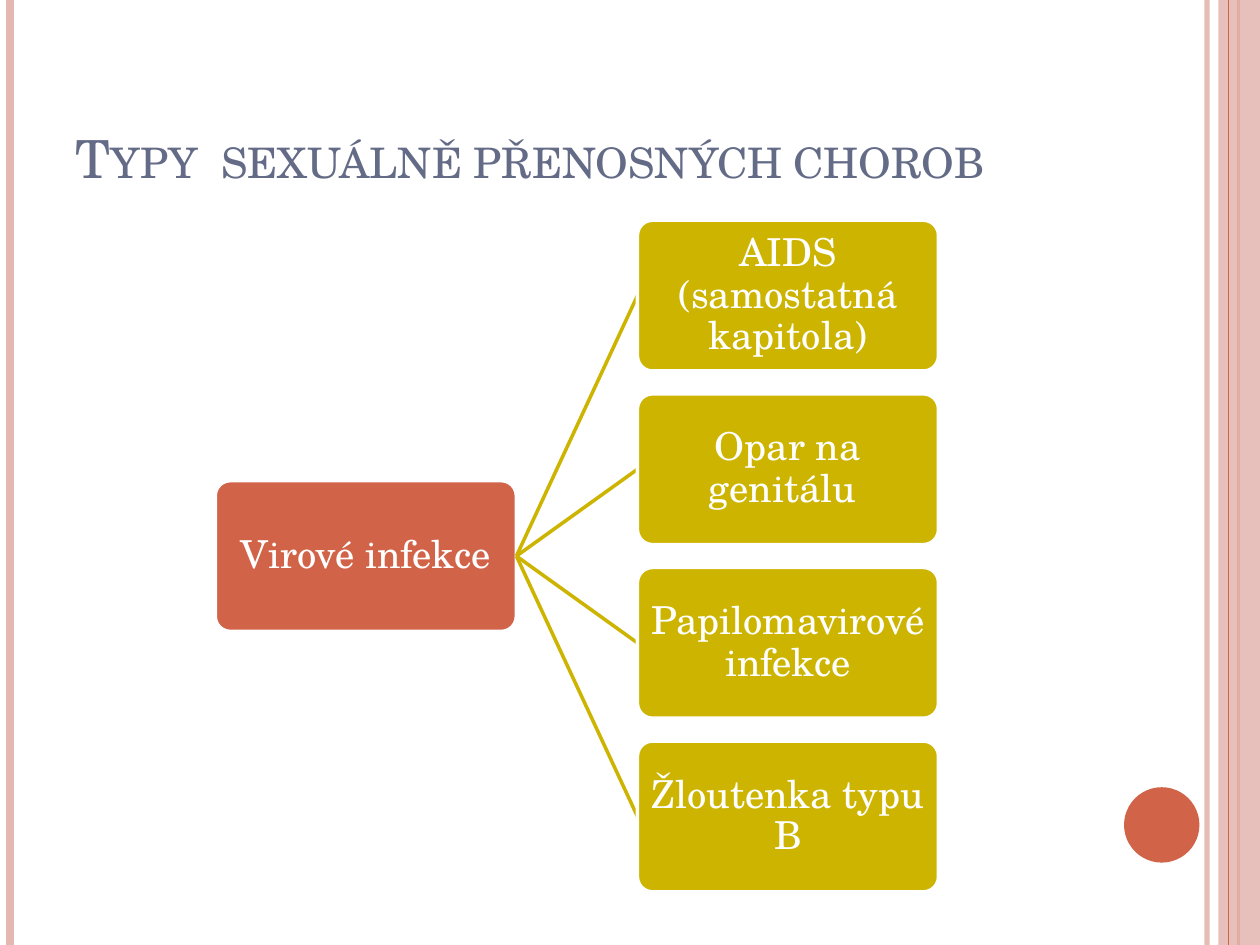
import pptx
import pptx.util
import pptx.dml.color
import pptx.enum.shapes
import pptx.enum.text
import pptx.oxml.ns
import lxml.etree
from dataclasses import dataclass

Cm, Pt = pptx.util.Cm, pptx.util.Pt
SHAPE = pptx.enum.shapes.MSO_SHAPE
ANCHOR = pptx.enum.text.MSO_ANCHOR
ALIGN = pptx.enum.text.PP_ALIGN


@dataclass(frozen=True)
class Theme:
    font: str = "TeX Gyre Schola"
    title_size: int = 30
    node_size: int = 22
    white: str = "FFFFFF"
    title: str = "646B86"
    accent: str = "D16349"
    pale: str = "E5B7B1"
    branch: str = "CCB400"


THEME = Theme()


def rgb(color):
    return pptx.dml.color.RGBColor.from_string(color)


def apply(obj, formats):
    for name, value in formats.items():
        setattr(obj, name, value)


def set_alpha(fill, percent):
    clr = fill._xPr.find(".//" + pptx.oxml.ns.qn("a:srgbClr"))
    lxml.etree.SubElement(clr, pptx.oxml.ns.qn("a:alpha"), val=str(percent * 1000))


def write(tf, text, size, color, align, frame):
    apply(tf, {"word_wrap": True, "auto_size": pptx.enum.text.MSO_AUTO_SIZE.NONE, **frame})
    p = tf.paragraphs[0]
    p.alignment = align
    r = p.add_run()
    r.text = text
    apply(r.font, {"name": THEME.font, "size": Pt(size)})
    r.font.color.rgb = rgb(color)
    return p, r


def add_box(s, kind, x, y, w, h, color):
    sp = s.shapes.add_shape(kind, Cm(x), Cm(y), Cm(w), Cm(h))
    sp.shadow.inherit = False
    sp.fill.solid()
    sp.fill.fore_color.rgb = rgb(color)
    sp.line.fill.background()
    return sp


def add_line(s, x1, y1, x2, y2, color, width, alpha=100):
    cx = s.shapes.add_connector(
        pptx.enum.shapes.MSO_CONNECTOR.STRAIGHT, Cm(x1), Cm(y1), Cm(x2), Cm(y2))
    cx.line.color.rgb = rgb(color)
    cx.line.width = Pt(width)
    if alpha < 100:
        set_alpha(cx.line.fill, alpha)
    lxml.etree.SubElement(cx._element.spPr, pptx.oxml.ns.qn("a:effectLst"))
    return cx


def add_frame(s, x, y, w, h):
    def rule(dx, color, width, alpha=100):
        add_line(s, x + dx, y, x + dx, y + h, color, width, alpha)

    rule(w - 1.07, THEME.pale, 3, 93)
    rule(0.21, THEME.pale, 4.5)
    rule(w - 0.43, THEME.accent, 1.5)
    band = add_box(s, SHAPE.RECTANGLE, x + w - 0.84, y, 0.84, h, THEME.pale)
    set_alpha(band.fill, 87)
    rule(w - 0.64, THEME.accent, 0.75)
    add_box(s, SHAPE.OVAL, x + w - 2.74, y + h - 3.18, 1.52, 1.52, THEME.accent)


def add_title(s, text, x, y, w, h):
    sp = s.shapes.title
    apply(sp, {"left": Cm(x), "top": Cm(y), "width": Cm(w), "height": Cm(h)})
    _, r = write(sp.text_frame, text, THEME.title_size, THEME.title, ALIGN.LEFT,
                 {"vertical_anchor": ANCHOR.BOTTOM})
    r.font._element.set("cap", "small")


def add_node(s, text, x, y, w, h, color):
    sp = add_box(s, SHAPE.ROUNDED_RECTANGLE, x, y, w, h, color)
    sp.adjustments[0] = 0.1
    sp.line.color.rgb = rgb(THEME.white)
    sp.line.width = Pt(2)
    margins = {f"margin_{side}": Cm(0.05) for side in ("left", "top", "right", "bottom")}
    p, _ = write(sp.text_frame, text, THEME.node_size, THEME.white, ALIGN.CENTER,
                 {"vertical_anchor": ANCHOR.MIDDLE, **margins})
    p.line_spacing = 0.9
    return sp


def add_tree(s, root, children, x, y, w, h):
    node_w, node_h = 6.07, 3.04
    pitch = (h - node_h) / (len(children) - 1)
    root_y = y + (h - node_h) / 2
    child_x = x + w - node_w
    root_sp = add_node(s, root, x, root_y, node_w, node_h, THEME.accent)
    for i, text in enumerate(children):
        child_y = y + i * pitch
        cx = add_line(s, x + node_w, root_y + node_h / 2,
                      child_x, child_y + node_h / 2, THEME.branch, 2)
        child_sp = add_node(s, text, child_x, child_y, node_w, node_h, THEME.branch)
        cx.begin_connect(root_sp, 3)
        cx.end_connect(child_sp, 1)


def main():
    prs = pptx.Presentation()
    apply(prs, {"slide_width": Cm(25.4), "slide_height": Cm(19.05)})
    s = prs.slides.add_slide(prs.slide_layouts[5])
    add_frame(s, 0, 0, 25.4, 19.05)
    add_title(s, "Typy  sexuálně přenosných chorob", 1.27, 0.76, 20.75, 3.18)
    add_tree(s, "Virové infekce",
             ["AIDS (samostatná kapitola)", "Opar na genitálu ",
              "Papilomavirové infekce", "Žloutenka typu B"],
             4.34, 4.44, 14.58, 13.54)
    prs.save("out.pptx")


if __name__ == "__main__":
    main()
